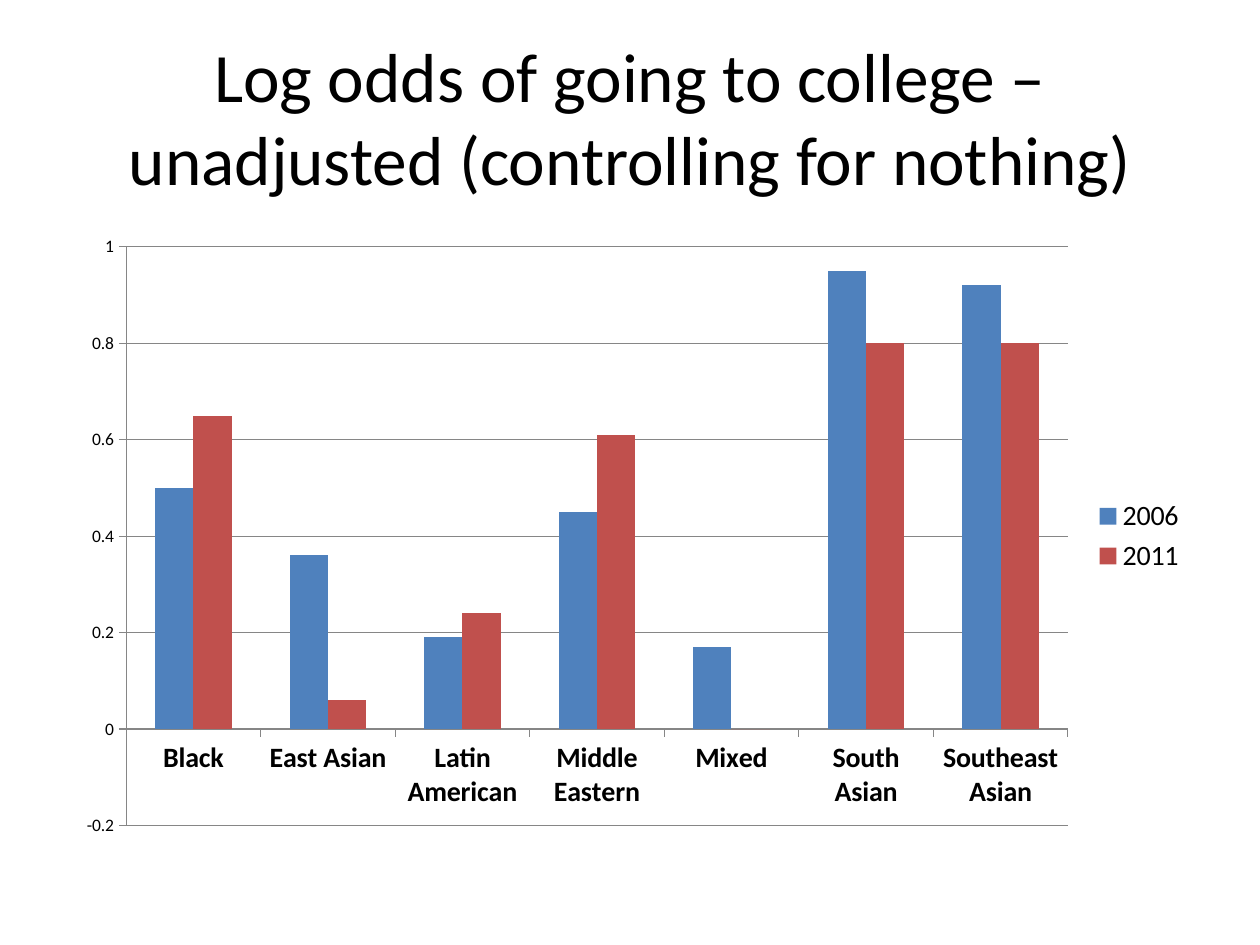
from pptx import Presentation
from pptx import util as u
from pptx.chart import data
from pptx.dml.color import RGBColor
from pptx.enum import chart as kinds, text

BLACK = RGBColor(0x00, 0x00, 0x00)
GRAY = RGBColor(0x86, 0x86, 0x86)
BLUE = RGBColor(0x4F, 0x81, 0xBD)
RED = RGBColor(0xC0, 0x50, 0x4D)
FONT = "Calibri"

GROUPS = ["Black", "East Asian", "Latin American", "Middle Eastern",
          "Mixed", "South Asian", "Southeast Asian"]
LOG_ODDS = [
    ("2006", BLUE, [0.5, 0.36, 0.19, 0.45, 0.17, 0.95, 0.92]),
    ("2011", RED, [0.65, 0.06, 0.24, 0.61, 0, 0.8, 0.8]),
]


def style_font(font, size, bold=False):
    """Give a font the slide's typeface and colour."""
    font.name = FONT
    font.size = u.Pt(size)
    font.bold = bold
    font.color.rgb = BLACK


def add_text(page, words, left, top, width, height, size):
    """Add a centred, wrapping text box."""
    box = page.shapes.add_textbox(u.Pt(left), u.Pt(top), u.Pt(width), u.Pt(height))
    frame = box.text_frame
    frame.word_wrap = True
    frame.vertical_anchor = text.MSO_ANCHOR.MIDDLE
    para = frame.paragraphs[0]
    para.alignment = text.PP_ALIGN.CENTER
    span = para.add_run()
    span.text = words
    style_font(span.font, size)


def style_axis(axis, size, bold=False):
    """Set an axis's labels, line and outward ticks."""
    style_font(axis.tick_labels.font, size, bold)
    axis.format.line.color.rgb = GRAY
    axis.format.line.width = u.Pt(0.75)
    axis.major_tick_mark = kinds.XL_TICK_MARK.OUTSIDE
    axis.minor_tick_mark = kinds.XL_TICK_MARK.NONE


def add_columns(page, left, top, width, height):
    """Add the clustered column chart of log odds by group and year."""
    table = data.CategoryChartData(number_format="General")
    table.categories = GROUPS
    for name, _, values in LOG_ODDS:
        table.add_series(name, values)
    chart = page.shapes.add_chart(
        kinds.XL_CHART_TYPE.COLUMN_CLUSTERED,
        u.Pt(left), u.Pt(top), u.Pt(width), u.Pt(height), table).chart
    chart.has_title = False
    style_font(chart.font, 10)

    plot = chart.plots[0]
    plot.gap_width = 150
    plot.overlap = 0
    plot.vary_by_categories = False
    for series, (_, color, _) in zip(plot.series, LOG_ODDS):
        series.invert_if_negative = False
        series.format.fill.solid()
        series.format.fill.fore_color.rgb = color

    style_axis(chart.category_axis, 16, bold=True)
    scale = chart.value_axis
    style_axis(scale, 10)
    scale.minimum_scale, scale.maximum_scale, scale.major_unit = -0.2, 1, 0.2
    scale.has_major_gridlines = True
    scale.major_gridlines.format.line.color.rgb = GRAY
    scale.major_gridlines.format.line.width = u.Pt(0.75)

    chart.has_legend = True
    chart.legend.position = kinds.XL_LEGEND_POSITION.RIGHT
    chart.legend.include_in_layout = False
    style_font(chart.legend.font, 16)


def main():
    """Build and save the slide."""
    deck = Presentation()
    deck.slide_width, deck.slide_height = u.Pt(720), u.Pt(540)
    page = deck.slides.add_slide(deck.slide_layouts[6])
    add_text(page, "Log odds of going to college – unadjusted (controlling for nothing)",
             left=36, top=21.6, width=648, height=90, size=39.6)
    add_columns(page, left=36.7, top=128.2, width=648, height=356.4)
    deck.save("out.pptx")


if __name__ == "__main__":
    main()
